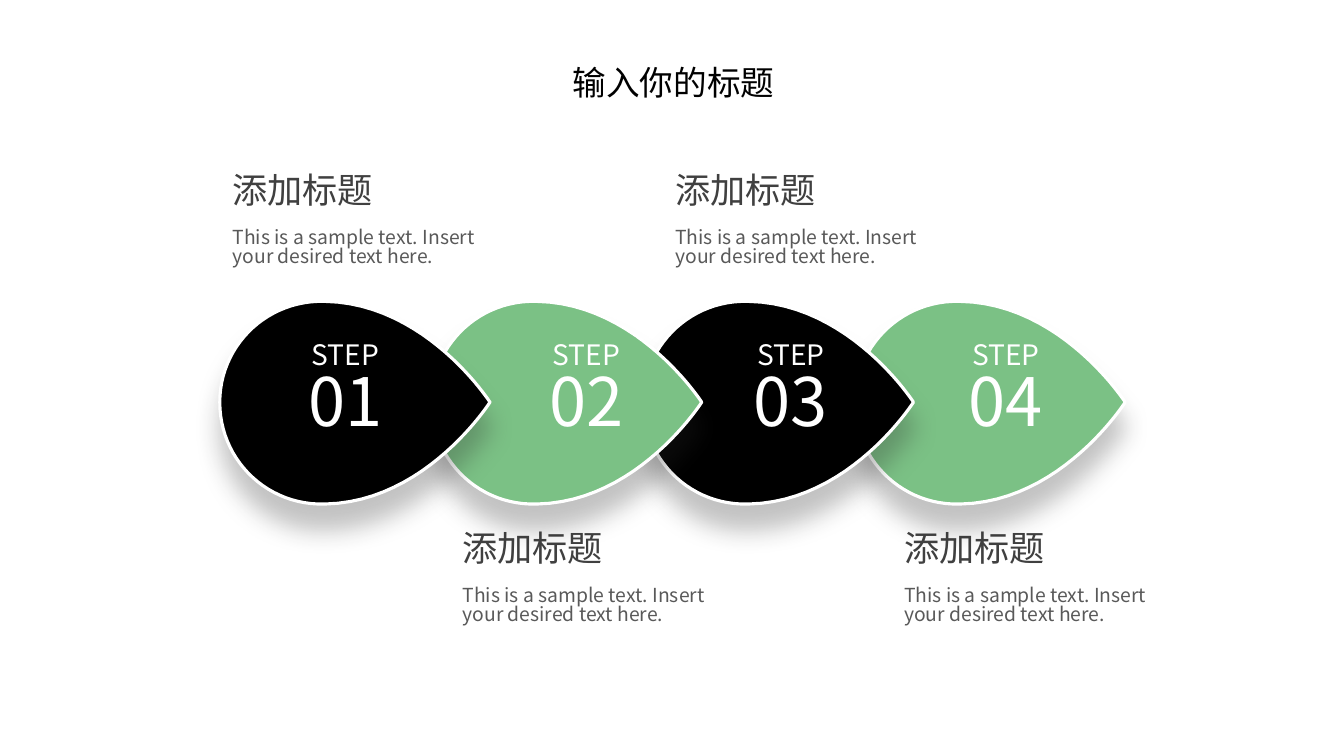
from lxml import etree
from pptx import Presentation, util as u
from pptx.dml.color import RGBColor
from pptx.enum import shapes, text
from pptx.oxml import ns

FONT = "Noto Sans CJK SC"
BLACK, GREEN, WHITE = "000000", "7BC185", "FFFFFF"
HEADING_GRAY, BODY_GRAY = "404040", "595959"
DROP_TOP, DROP_PITCH = 2.99, 2.1
DROP_START = (1.05, 0)
DROP_CURVES = [
    ((1.03, 0), (0.99, 0), (0.97, 0)),
    ((0.43, 0.02), (0, 0.46), (0, 1)),
    ((0, 1.55), (0.43, 1.99), (0.97, 2.01)),
    ((0.99, 2.01), (1.03, 2.01), (1.05, 2.01)),
    ((2.05, 1.99), (2.68, 1), (2.68, 1)),
    ((2.68, 1), (2.05, 0.02), (1.05, 0)),
]
STEPS = [
    ("01", BLACK, 2.93, 2.21, 1.68),
    ("02", GREEN, 5.32, 4.49, 5.23),
    ("03", BLACK, 7.35, 6.6, 1.68),
    ("04", GREEN, 9.48, 8.87, 5.23),
]


def color(hex_value):
    return RGBColor.from_string(hex_value)


def curve_points(start, curves, count=24):
    points = [start]
    for first, second, end in curves:
        origin = points[-1]
        for index in range(1, count + 1):
            t = index / count
            s = 1 - t
            points.append(tuple(
                s**3 * a + 3 * s * s * t * b + 3 * s * t * t * c + t**3 * d
                for a, b, c, d in zip(origin, first, second, end)))
    return points


class StepSlide:
    def __init__(self, presentation, font):
        self.font = font
        self.slide = presentation.slides.add_slide(presentation.slide_layouts[5])

    def fill_text(self, frame, lines, hex_value, align=text.PP_ALIGN.LEFT,
                  spacing=0.86, wrap=True):
        frame.auto_size = text.MSO_AUTO_SIZE.NONE
        frame.word_wrap = wrap
        frame.vertical_anchor = text.MSO_ANCHOR.TOP
        for index, (content, size) in enumerate(lines):
            paragraph = frame.add_paragraph() if index else frame.paragraphs[0]
            paragraph.alignment = align
            paragraph.line_spacing = spacing
            run = paragraph.add_run()
            run.text = content
            run.font.name = self.font
            run.font.size = u.Pt(size)
            run.font.color.rgb = color(hex_value)
            east_asian = etree.SubElement(run.font._element, ns.qn("a:ea"))
            east_asian.set("typeface", self.font)

    def title(self, content, left, top, width, height):
        shape = self.slide.shapes.title
        shape.left, shape.top = u.Inches(left), u.Inches(top)
        shape.width, shape.height = u.Inches(width), u.Inches(height)
        self.fill_text(shape.text_frame, [(content, 24)], BLACK)

    def text_box(self, content, left, top, width, height, size, hex_value, spacing):
        box = self.slide.shapes.add_textbox(
            u.Inches(left), u.Inches(top), u.Inches(width), u.Inches(height))
        self.fill_text(box.text_frame, [(content, size)], hex_value, spacing=spacing)

    def caption(self, left, top):
        self.text_box("This is a sample text. Insert your desired text here.",
                      left, top + 0.54, 2.63, 0.8, 13.8, BODY_GRAY, 0.84)
        self.text_box("添加标题", left, top, 1.99, 0.52, 25.1, HEADING_GRAY, 0.86)

    def drop(self, left, top, hex_value):
        points = [(u.Inches(left + x), u.Inches(top + y))
                  for x, y in curve_points(DROP_START, DROP_CURVES)]
        builder = self.slide.shapes.build_freeform(*points[0])
        builder.add_line_segments(points[1:], close=True)
        shape = builder.convert_to_shape()
        shape.fill.solid()
        shape.fill.fore_color.rgb = color(hex_value)
        shape.line.color.rgb = color(WHITE)
        shape.line.width = u.Pt(2.25)
        self.soft_shadow(shape)

    def soft_shadow(self, shape):
        shape.shadow.inherit = False
        effects = shape._element.spPr.find(ns.qn("a:effectLst"))
        shadow = etree.SubElement(
            effects, ns.qn("a:outerShdw"), blurRad=str(u.Pt(18)),
            dist=str(u.Pt(18)), dir="5400000", algn="t", rotWithShape="0")
        tint = etree.SubElement(shadow, ns.qn("a:srgbClr"), val="262626")
        etree.SubElement(tint, ns.qn("a:alpha"), val="28000")

    def step_label(self, number, left, top, hex_value):
        shape = self.slide.shapes.add_shape(
            shapes.MSO_SHAPE.RECTANGLE, u.Inches(left), u.Inches(top),
            u.Inches(0.99), u.Inches(1.24))
        shape.shadow.inherit = False
        shape.fill.solid()
        shape.fill.fore_color.rgb = color(hex_value)
        shape.line.fill.background()
        self.fill_text(shape.text_frame, [("STEP", 20.1), (number, 47.7)], WHITE,
                       align=text.PP_ALIGN.CENTER, wrap=False)


def main():
    presentation = Presentation()
    presentation.slide_width = u.Inches(13.33)
    presentation.slide_height = u.Inches(7.5)
    page = StepSlide(presentation, FONT)
    page.title("输入你的标题", 5.58, 0.62, 2.64, 0.5)
    for number, fill, label_left, caption_left, caption_top in STEPS:
        page.caption(caption_left, caption_top)
    for index, (number, fill, label_left, *caption) in reversed(list(enumerate(STEPS))):
        page.drop(2.18 + index * DROP_PITCH, DROP_TOP, fill)
        page.step_label(number, label_left, 3.35, fill)
    presentation.save("out.pptx")


if __name__ == "__main__":
    main()
